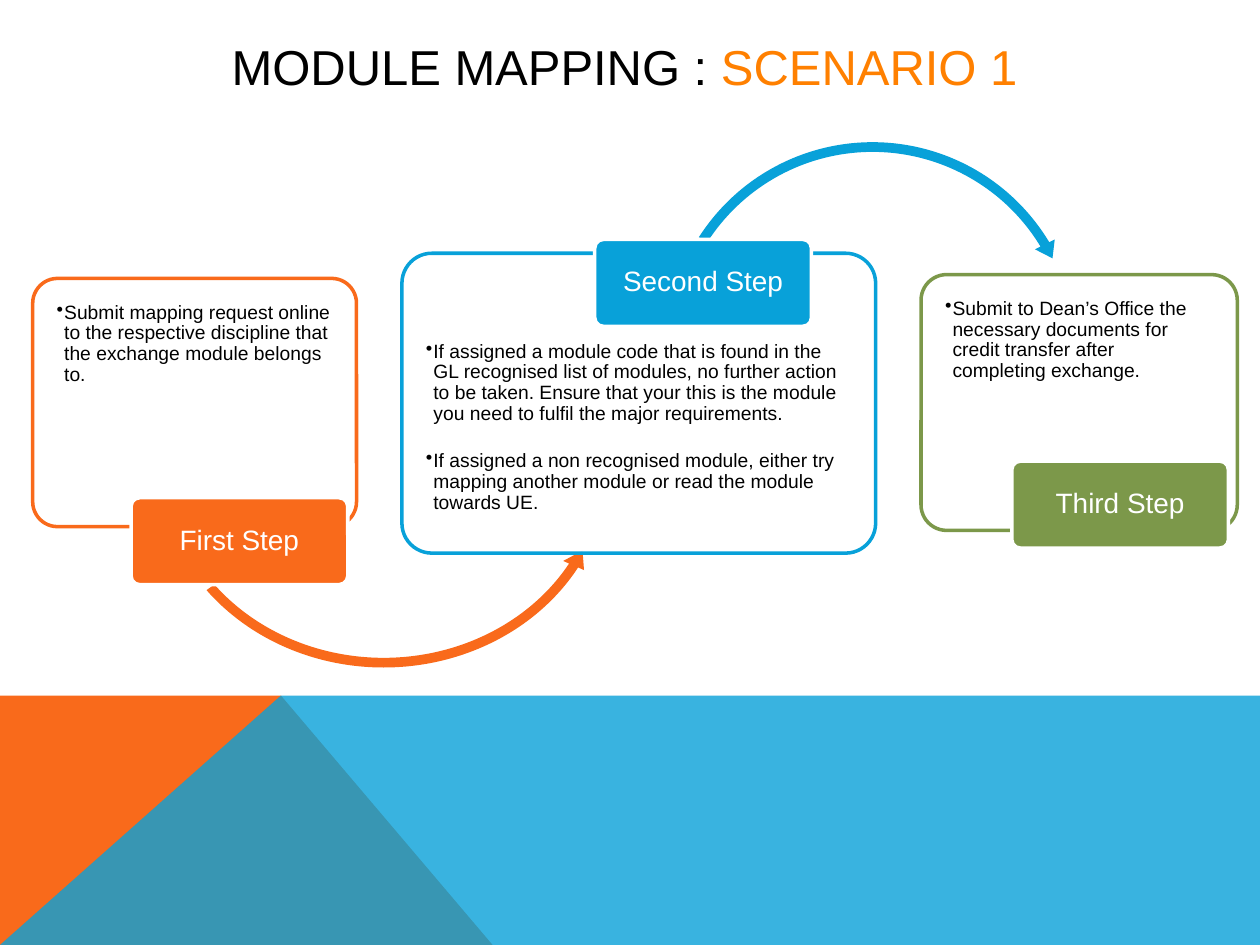
"""Build the module mapping slide: three steps linked by two circular arrows."""
from dataclasses import dataclass
from typing import NamedTuple, Optional

from lxml import etree
from pptx import Presentation
from pptx import util as u
from pptx.dml.color import RGBColor
from pptx.enum import shapes, text
from pptx.oxml.ns import qn


@dataclass(frozen=True)
class Theme:
    font: str = "Arial"
    orange: str = "F96A1B"
    blue: str = "08A1D9"
    green: str = "7C984A"
    accent: str = "FF8000"
    black: str = "000000"
    white: str = "FFFFFF"
    title: int = 28
    label: int = 16
    body: int = 11
    line: int = 2


class Box(NamedTuple):
    col: float
    row: float
    cols: float
    rows: float


@dataclass(frozen=True)
class Arrow:
    kind: shapes.MSO_SHAPE
    box: Box
    adjustments: tuple[float, ...]


@dataclass(frozen=True)
class Step:
    label: str
    color: str
    panel: Box
    badge: tuple[float, float]
    bullets: tuple[str, ...]
    arrow: Optional[Arrow] = None
    badge_on_top: bool = False


T = Theme()
COLS, ROWS = 100, 75
CELL = u.Inches(0.1)
BADGE_COLS, BADGE_ROWS = 17.2, 6.9
PANEL_PAD, BADGE_OVERLAP = 0.5, 4.6
HORIZON, PEAK, SLOPE_END = 55.2, 22.3, 39.1

STEPS = (
    Step("First Step", T.orange, Box(2.6, 22.1, 25.7, 19.7), (10.4, 39.5),
         ("Submit mapping request online to the respective discipline that "
          "the exchange module belongs to.",),
         Arrow(shapes.MSO_SHAPE.LEFT_CIRCULAR_ARROW, Box(12, 20.1, 36.9, 33.4),
               (0.023, 2.742, 16.928, 86.676, 0.027))),
    Step("Second Step", T.blue, Box(31.9, 20.1, 37.6, 23.8), (47.2, 19),
         ("If assigned a module code that is found in the GL recognised list of "
          "modules, no further action to be taken. Ensure that your this is the "
          "module you need to fulfil the major requirements.",
          "If assigned a non recognised module, either try mapping another "
          "module or read the module towards UE."),
         Arrow(shapes.MSO_SHAPE.CIRCULAR_ARROW, Box(52.4, 10.8, 33.7, 33.7),
               (0.023, 2.713, 197.344, 127.568, 0.026)), True),
    Step("Third Step", T.green, Box(73.1, 21.8, 25.1, 20.3), (80.3, 36.6),
         ("Submit to Dean’s Office the necessary documents for credit transfer "
          "after completing exchange.",)),
)


def place(box: Box) -> list[int]:
    """Convert a grid box to slide lengths."""
    return [round(v * CELL) for v in box]


def paint(sp, fill: str, line: Optional[str] = None, opacity: int = 100) -> None:
    """Set the fill, outline and opacity of a shape."""
    sp.shadow.inherit = False
    sp.fill.solid()
    sp.fill.fore_color.rgb = RGBColor.from_string(fill)
    if opacity < 100:
        clr = sp._element.spPr.find(qn("a:solidFill"))[0]
        etree.SubElement(clr, qn("a:alpha"), val=str(opacity * 1000))
    if line:
        sp.line.color.rgb = RGBColor.from_string(line)
        sp.line.width = u.Pt(T.line)
    else:
        sp.line.fill.background()


def add_run(p, words: str, size: int, color: str) -> None:
    """Append one styled run to a paragraph."""
    r = p.add_run()
    r.text = words
    r.font.name, r.font.size = T.font, u.Pt(size)
    r.font.color.rgb = RGBColor.from_string(color)


def set_frame(tf, anchor, x: float, y: float) -> None:
    """Set wrapping, anchor and insets in inches."""
    tf.word_wrap, tf.vertical_anchor = True, anchor
    tf.margin_left = tf.margin_right = u.Inches(x)
    tf.margin_top = tf.margin_bottom = u.Inches(y)


def add_polygon(s, points: list[tuple[float, float]], fill: str, opacity: int = 100) -> None:
    """Draw a closed polygon from grid points."""
    start, *rest = [(round(x * CELL), round(y * CELL)) for x, y in points]
    fb = s.shapes.build_freeform(*start)
    fb.add_line_segments(rest, close=True)
    paint(fb.convert_to_shape(), fill, opacity=opacity)


def add_title(s) -> None:
    """Write the two-colour title."""
    tf = s.shapes.add_textbox(*place(Box(9, 2.2, 82.2, 6))).text_frame
    set_frame(tf, text.MSO_ANCHOR.MIDDLE, 0.1, 0.05)
    p = tf.paragraphs[0]
    p.alignment = text.PP_ALIGN.CENTER
    add_run(p, "MODULE MAPPING : ", T.title, T.black)
    add_run(p, "SCENARIO 1 ", T.title, T.accent)


def add_rounded(s, box: Box, fill: str, line: str, opacity: int = 100):
    """Draw a rounded rectangle."""
    sp = s.shapes.add_shape(shapes.MSO_SHAPE.ROUNDED_RECTANGLE, *place(box))
    sp.adjustments[0] = 0.1
    paint(sp, fill, line, opacity)
    return sp


def add_bullets(s, step: Step) -> None:
    """Write the bullets in the part of the panel clear of the badge."""
    b = step.panel
    top = b.row + PANEL_PAD + (BADGE_OVERLAP + PANEL_PAD if step.badge_on_top else 0)
    box = Box(b.col + PANEL_PAD, top, b.cols - 2 * PANEL_PAD,
              b.rows - PANEL_PAD - BADGE_OVERLAP)
    tf = s.shapes.add_textbox(*place(box)).text_frame
    set_frame(tf, text.MSO_ANCHOR.TOP, 0.14, 0.14)
    for i, words in enumerate(step.bullets):
        p = tf.add_paragraph() if i else tf.paragraphs[0]
        p.line_spacing = 0.9
        p.space_before = u.Pt(15 if i else 0)
        pPr = p._p.get_or_add_pPr()
        pPr.set("marL", str(u.Inches(0.06)))
        pPr.set("indent", str(-u.Inches(0.06)))
        etree.SubElement(pPr, qn("a:buChar"), char="•")
        add_run(p, words, T.body, T.black)


def add_arrow(s, arrow: Arrow, color: str) -> None:
    """Draw a circular arrow to the next step."""
    sp = s.shapes.add_shape(arrow.kind, *place(arrow.box))
    for i, value in enumerate(arrow.adjustments):
        sp.adjustments[i] = value
    paint(sp, color)


def add_step(s, step: Step) -> None:
    """Draw a step's panel, bullets, arrow and badge."""
    add_rounded(s, step.panel, T.white, step.color, 90)
    add_bullets(s, step)
    if step.arrow:
        add_arrow(s, step.arrow, step.color)
    badge = add_rounded(s, Box(*step.badge, BADGE_COLS, BADGE_ROWS), step.color, T.white)
    set_frame(badge.text_frame, text.MSO_ANCHOR.MIDDLE, 0.03, 0.02)
    p = badge.text_frame.paragraphs[0]
    p.alignment, p.line_spacing = text.PP_ALIGN.CENTER, 0.9
    add_run(p, step.label, T.label, T.white)


def main() -> None:
    """Build and save the slide."""
    prs = Presentation()
    prs.slide_width, prs.slide_height = COLS * CELL, ROWS * CELL
    s = prs.slides.add_slide(prs.slide_layouts[6])
    add_polygon(s, [(0, ROWS), (0, HORIZON), (PEAK, HORIZON), (SLOPE_END, ROWS)], T.orange)
    add_polygon(s, [(0, ROWS), (PEAK, HORIZON), (COLS, HORIZON), (COLS, ROWS)], T.blue, 80)
    add_title(s)
    for step in STEPS:
        add_step(s, step)
    prs.save("out.pptx")


if __name__ == "__main__":
    main()
